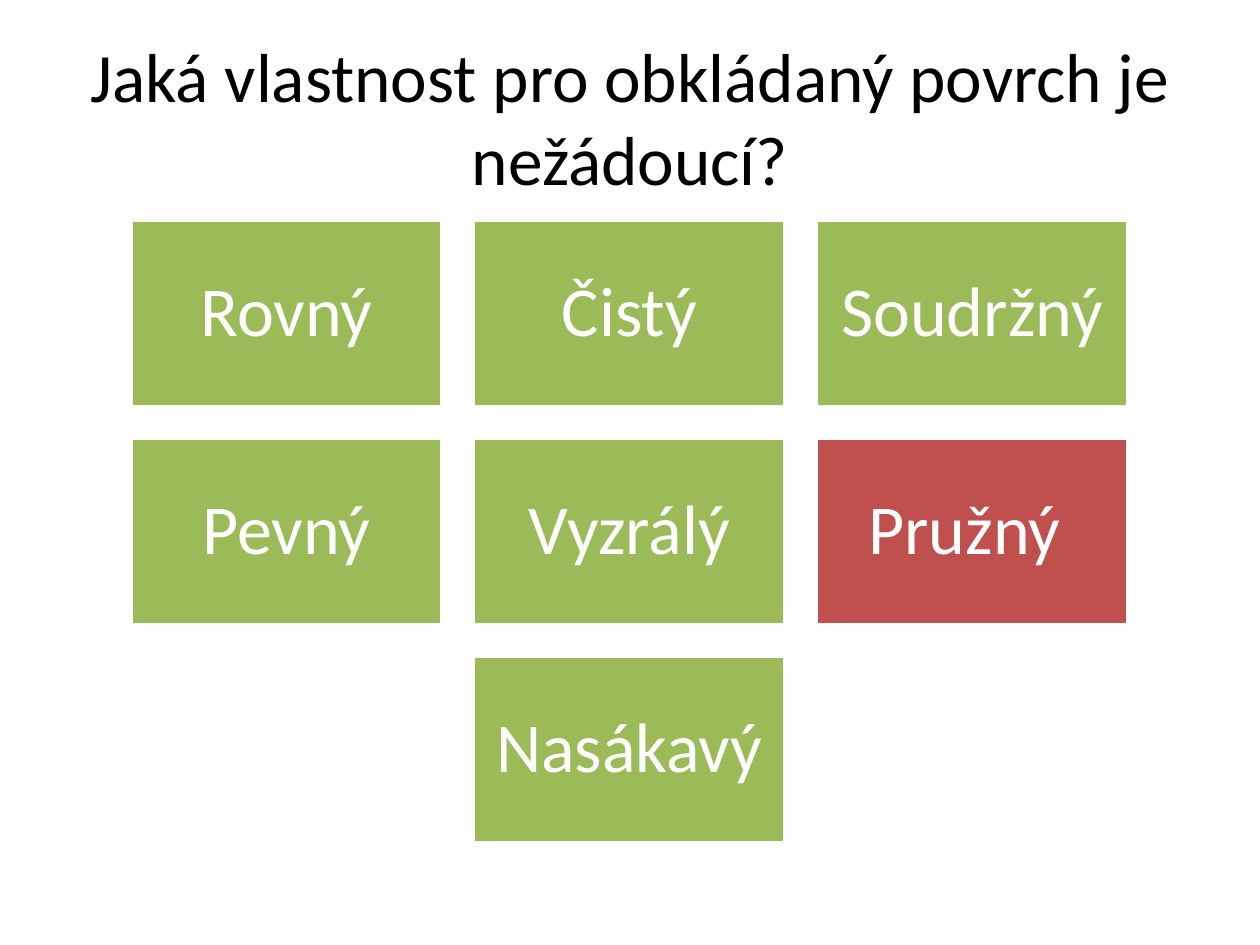
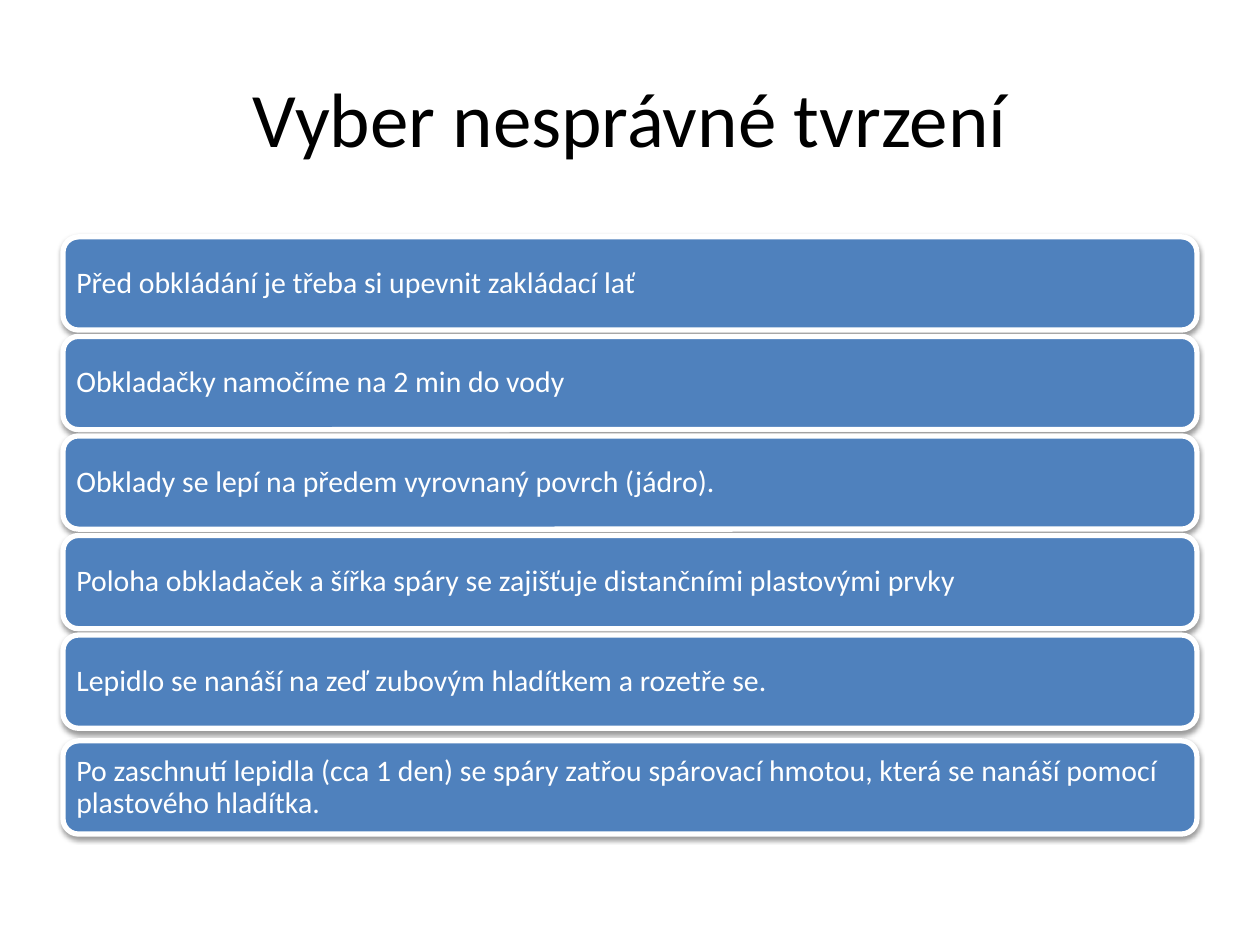
from lxml.etree import SubElement
from pptx import Presentation
from pptx.dml.color import RGBColor
from pptx.enum.shapes import MSO_SHAPE
from pptx.enum.text import MSO_ANCHOR, MSO_AUTO_SIZE, PP_ALIGN
from pptx.oxml.ns import qn
from pptx.util import Inches, Pt

FONT = "Calibri"
BLACK, WHITE = "000000", "FFFFFF"
GREEN, RED, BLUE = "9BBB59", "C0504D", "4F81BD"
TITLE_BOX = (0.5, 0.3, 9, 1.25)
TILES_BOX = (1.04, 1.75, 7.91, 4.94)
STATEMENTS_BOX = (0.5, 1.88, 9, 4.74)

PROPERTIES = [
    ("Rovný", GREEN), ("Čistý", GREEN), ("Soudržný", GREEN),
    ("Pevný", GREEN), ("Vyzrálý", GREEN), ("Pružný ", RED),
    ("Nasákavý", GREEN),
]
STATEMENTS = [
    "Před obkládání je třeba si upevnit zakládací lať",
    "Obkladačky namočíme na 2 min do vody",
    "Obklady se lepí na předem vyrovnaný povrch (jádro).",
    "Poloha obkladaček a šířka spáry se zajišťuje distančními plastovými prvky",
    "Lepidlo se nanáší na zeď zubovým hladítkem a rozetře se.",
    "Po zaschnutí lepidla (cca 1 den) se spáry zatřou spárovací hmotou, "
    "která se nanáší pomocí plastového hladítka.",
]


def rgb(color):
    """Turn a hex string into a colour."""
    return RGBColor.from_string(color)


def write_text(shape, text, size, color, alignment):
    """Write one vertically centred paragraph into a shape and return it."""
    frame = shape.text_frame
    frame.word_wrap = True
    frame.auto_size = MSO_AUTO_SIZE.NONE
    frame.vertical_anchor = MSO_ANCHOR.MIDDLE
    paragraph = frame.paragraphs[0]
    paragraph.alignment = alignment
    run = paragraph.add_run()
    run.text = text
    run.font.name = FONT
    run.font.size = Pt(size)
    run.font.color.rgb = rgb(color)
    return paragraph


def add_titled_slide(presentation, title, size):
    """Add a title-only slide with its title placed and formatted."""
    slide = presentation.slides.add_slide(presentation.slide_layouts[5])
    shape = slide.shapes.title
    shape.left, shape.top, shape.width, shape.height = map(Inches, TITLE_BOX)
    write_text(shape, title, size, BLACK, PP_ALIGN.CENTER)
    return slide


def add_block(slide, preset, box, fill, line_width, text, size, alignment, inset):
    """Add a filled, white-outlined shape with white text."""
    shape = slide.shapes.add_shape(preset, *map(Inches, box))
    shape.shadow.inherit = False
    shape.fill.solid()
    shape.fill.fore_color.rgb = rgb(fill)
    shape.line.color.rgb = rgb(WHITE)
    shape.line.width = Pt(line_width)
    frame = shape.text_frame
    frame.margin_left = frame.margin_right = Inches(inset)
    frame.margin_top = frame.margin_bottom = Inches(inset)
    write_text(shape, text, size, WHITE, alignment).line_spacing = 0.9
    return shape


def add_drop_shadow(shape):
    """Give a shape a soft black shadow straight below it."""
    effects = shape._element.spPr.find(qn("a:effectLst"))
    shadow = SubElement(effects, qn("a:outerShdw"), blurRad=str(Pt(3.1)),
                        dist=str(Pt(1.6)), dir="5400000", rotWithShape="0")
    color = SubElement(shadow, qn("a:srgbClr"), val=BLACK)
    SubElement(color, qn("a:alpha"), val="38000")


def add_property_tiles(slide, box, properties, columns=3, gap=0.25):
    """Lay tiles out in rows, centring each row in the box."""
    left, top, width, height = box
    rows = -(-len(properties) // columns)
    tile_width = (width - gap * (columns - 1)) / columns
    tile_height = (height - gap * (rows - 1)) / rows
    for index, (text, fill) in enumerate(properties):
        row, column = divmod(index, columns)
        in_row = min(columns, len(properties) - row * columns)
        indent = (columns - in_row) * (tile_width + gap) / 2
        tile = (left + indent + column * (tile_width + gap),
                top + row * (tile_height + gap), tile_width, tile_height)
        add_block(slide, MSO_SHAPE.RECTANGLE, tile, fill, 2, text, 40,
                  PP_ALIGN.CENTER, 0.17)


def add_statement_bars(slide, box, statements, bar_height=0.74, gap=0.05):
    """Stack bars from the top of the box, with the last one at its bottom."""
    left, top, width, height = box
    tops = [top + index * (bar_height + gap) for index in range(len(statements) - 1)]
    tops.append(top + height - bar_height)
    for bar_top, text in zip(tops, statements):
        bar = add_block(slide, MSO_SHAPE.ROUNDED_RECTANGLE,
                        (left, bar_top, width, bar_height), BLUE, 3, text, 17,
                        PP_ALIGN.LEFT, 0.07)
        add_drop_shadow(bar)


def main():
    """Build both quiz slides and save them."""
    presentation = Presentation()
    presentation.slide_width = Inches(10)
    presentation.slide_height = Inches(7.5)
    slide = add_titled_slide(
        presentation, "Jaká vlastnost pro obkládaný povrch je nežádoucí?", 39.6)
    add_property_tiles(slide, TILES_BOX, PROPERTIES)
    slide = add_titled_slide(presentation, "Vyber nesprávné tvrzení", 44)
    add_statement_bars(slide, STATEMENTS_BOX, STATEMENTS)
    presentation.save("out.pptx")


if __name__ == "__main__":
    main()
